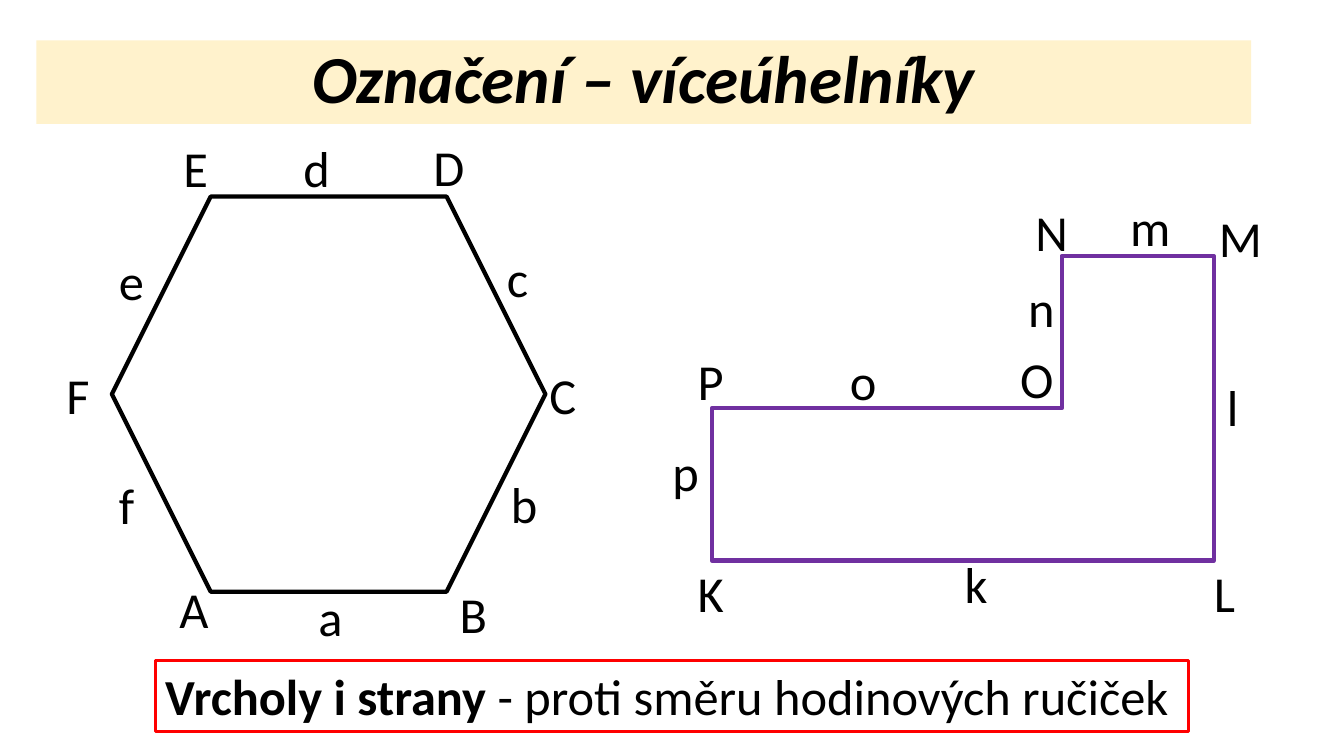
import pptx
import pptx.util
import pptx.dml.color
import pptx.enum.shapes
import pptx.enum.text

Inches, Pt = pptx.util.Inches, pptx.util.Pt
SHAPE = pptx.enum.shapes.MSO_SHAPE
ALIGN = pptx.enum.text.PP_ALIGN
ANCHOR = pptx.enum.text.MSO_ANCHOR
FIT = pptx.enum.text.MSO_AUTO_SIZE

COLORS = {"text": "000000", "banner": "FFF2CC", "hexagon": "000000",
          "corner": "7030A0", "rule": "FF0000"}

HEADING = "Označení – víceúhelníky"
HEADING_BOX = (0.36, 0.4, 12.05, 0.83)
RULE = [("Vrcholy i strany ", True), ("- proti směru hodinových ručiček", False)]
RULE_BOX = (1.54, 6.55, 10.25, 0.71)

HEXAGON_BOX = (1.11, 1.95, 4.3, 3.92)
# vertices K, L, M, N, O, P
CORNER_VERTICES = [(7.06, 5.56), (12.04, 5.56), (12.04, 2.54),
                   (10.53, 2.54), (10.53, 4.05), (7.06, 4.05)]

# letter: left, top, width
HEXAGON_LABELS = {
    "A": (1.68, 5.69, 0.49), "B": (4.46, 5.74, 0.48), "C": (5.35, 3.56, 0.47),
    "D": (4.2, 1.3, 0.51), "E": (1.72, 1.31, 0.45), "F": (0.56, 3.56, 0.43),
    "a": (3.06, 5.77, 0.44), "b": (4.97, 4.64, 0.47), "c": (4.93, 2.4, 0.42),
    "d": (2.91, 1.31, 0.47), "e": (1.08, 2.43, 0.45), "f": (1.08, 4.65, 0.36),
}
CORNER_LABELS = {
    "K": (6.82, 5.53, 0.46), "L": (11.94, 5.53, 0.41), "M": (11.99, 2.01, 0.63),
    "N": (10.17, 1.95, 0.53), "O": (10.02, 3.4, 0.54), "P": (6.82, 3.42, 0.46),
    "k": (9.47, 5.44, 0.43), "l": (12.07, 3.68, 0.32), "m": (11.11, 1.9, 0.61),
    "n": (10.1, 2.7, 0.47), "o": (8.33, 3.42, 0.47), "p": (6.57, 4.33, 0.47),
}
LABEL_HEIGHT = 0.71


def rgb(name):
    return pptx.dml.color.RGBColor.from_string(COLORS[name])


def inches(lengths):
    return [Inches(length) for length in lengths]


def set_all(target, values):
    for key, value in values.items():
        setattr(target, key, value)


def add_run(paragraph, text, **font):
    run = paragraph.add_run()
    run.text = text
    set_all(run.font, {"name": "Calibri", "size": Pt(36), **font})
    run.font.color.rgb = rgb("text")


def outline(shape, color, width):
    shape.line.color.rgb = rgb(color)
    shape.line.width = Pt(width)


def add_heading(slide):
    heading = slide.shapes.title
    set_all(heading, dict(zip(("left", "top", "width", "height"), inches(HEADING_BOX))))
    heading.fill.solid()
    heading.fill.fore_color.rgb = rgb("banner")
    set_all(heading.text_frame, {"vertical_anchor": ANCHOR.MIDDLE,
                                 "word_wrap": True, "auto_size": FIT.NONE})
    paragraph = heading.text_frame.paragraphs[0]
    set_all(paragraph, {"alignment": ALIGN.CENTER, "line_spacing": 0.9})
    add_run(paragraph, HEADING, size=Pt(48), bold=True, italic=True)


def add_polygons(slide):
    hexagon = slide.shapes.add_shape(SHAPE.HEXAGON, *inches(HEXAGON_BOX))
    start, *others = [inches(vertex) for vertex in CORNER_VERTICES]
    builder = slide.shapes.build_freeform(*start)
    builder.add_line_segments(others, close=True)
    corner = builder.convert_to_shape()
    for polygon, color in ((hexagon, "hexagon"), (corner, "corner")):
        polygon.shadow.inherit = False
        polygon.fill.background()
        outline(polygon, color, 3)


def add_text(slide, box, runs, wrap):
    textbox = slide.shapes.add_textbox(*inches(box))
    set_all(textbox.text_frame, {"word_wrap": wrap, "auto_size": FIT.SHAPE_TO_FIT_TEXT})
    for text, bold in runs:
        add_run(textbox.text_frame.paragraphs[0], text, bold=bold)
    return textbox


def main():
    deck = pptx.Presentation()
    set_all(deck, {"slide_width": Inches(13.33), "slide_height": Inches(7.5)})
    slide = deck.slides.add_slide(deck.slide_layouts[5])
    add_heading(slide)
    add_polygons(slide)
    for labels in (HEXAGON_LABELS, CORNER_LABELS):
        for letter, place in labels.items():
            add_text(slide, (*place, LABEL_HEIGHT), [(letter, False)], wrap=False)
    outline(add_text(slide, RULE_BOX, RULE, wrap=True), "rule", 2)
    deck.save("out.pptx")


if __name__ == "__main__":
    main()
